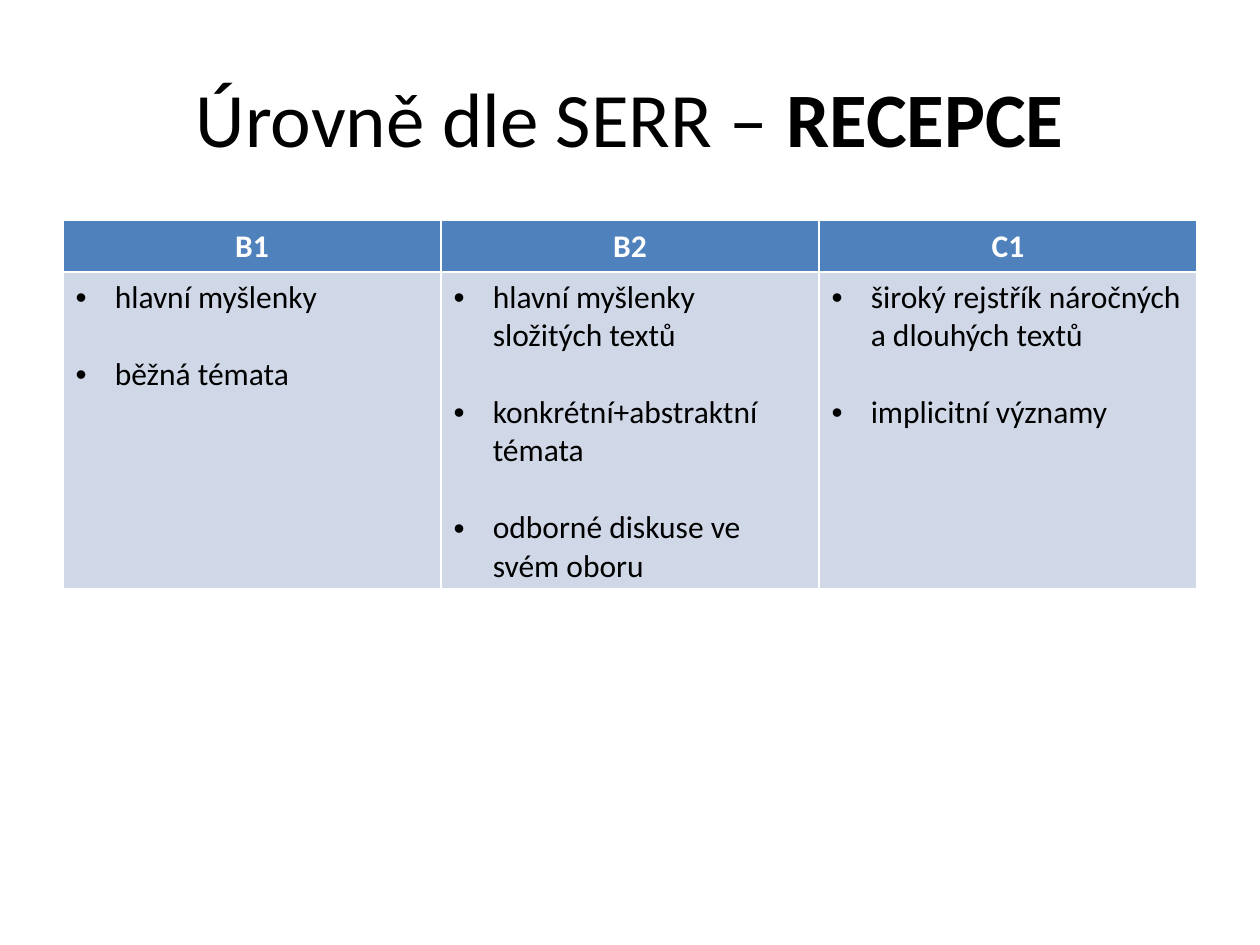
"""Build a slide comparing reception skills at CEFR levels B1, B2 and C1."""
import pptx
import pptx.dml.color
import pptx.enum.text
import pptx.oxml
import pptx.oxml.ns
import pptx.util

Cm = pptx.util.Cm
Pt = pptx.util.Pt
RGBColor = pptx.dml.color.RGBColor
Align = pptx.enum.text.PP_ALIGN

BLACK = RGBColor(0x00, 0x00, 0x00)
WHITE = RGBColor(0xFF, 0xFF, 0xFF)
HEADER_BLUE = RGBColor(0x4F, 0x81, 0xBD)
BODY_BLUE = RGBColor(0xD0, 0xD8, 0xE8)

LEVELS = {
    "B1": ["hlavní myšlenky", "běžná témata"],
    "B2": [
        "hlavní myšlenky složitých textů",
        "konkrétní+abstraktní témata",
        "odborné diskuse ve svém oboru",
    ],
    "C1": ["široký rejstřík náročných a dlouhých textů", "implicitní významy"],
}


class SlideBuilder:
    font_name = "Calibri"
    title_size = Pt(44)
    text_size = Pt(18)
    item_gap = Pt(22)
    bullet_indent = Cm(0.79)

    def __init__(self, page):
        self.page = page

    def style(self, paragraph, size, color, bold=None):
        font = paragraph.font
        font.name, font.size, font.bold = self.font_name, size, bold
        font.color.rgb = color

    def title(self, left, top, width, height, plain, strong):
        frame = self.page.shapes.add_textbox(left, top, width, height).text_frame
        frame.word_wrap = True
        frame.vertical_anchor = pptx.enum.text.MSO_ANCHOR.MIDDLE
        paragraph = frame.paragraphs[0]
        paragraph.alignment = Align.CENTER
        self.style(paragraph, self.title_size, BLACK)
        paragraph.add_run().text = plain
        span = paragraph.add_run()
        span.text = strong
        span.font.bold = True

    def bullet(self, paragraph):
        properties = paragraph._p.get_or_add_pPr()
        properties.set("marL", str(self.bullet_indent))
        properties.set("indent", str(-self.bullet_indent))
        namespace = pptx.oxml.ns.nsdecls("a")
        for xml in (
            f'<a:buFont {namespace} typeface="Arial"/>',
            f'<a:buChar {namespace} char="•"/>',
        ):
            properties.insert_element_before(
                pptx.oxml.parse_xml(xml), "a:tabLst", "a:defRPr", "a:extLst"
            )

    def fill(self, cell, color):
        cell.fill.solid()
        cell.fill.fore_color.rgb = color

    def header_cell(self, cell, label):
        self.fill(cell, HEADER_BLUE)
        paragraph = cell.text_frame.paragraphs[0]
        paragraph.text = label
        paragraph.alignment = Align.CENTER
        self.style(paragraph, self.text_size, WHITE, True)

    def list_cell(self, cell, items):
        self.fill(cell, BODY_BLUE)
        frame = cell.text_frame
        for index, item in enumerate(items):
            paragraph = frame.add_paragraph() if index else frame.paragraphs[0]
            paragraph.text = item
            self.style(paragraph, self.text_size, BLACK)
            if index:
                paragraph.space_before = self.item_gap
            self.bullet(paragraph)

    def level_table(self, left, top, width, row_heights, levels):
        table = self.page.shapes.add_table(
            len(row_heights), len(levels), left, top, width, sum(row_heights)
        ).table
        for row, height in zip(table.rows, row_heights):
            row.height = height
        for column, (label, items) in enumerate(levels.items()):
            self.header_cell(table.cell(0, column), label)
            self.list_cell(table.cell(1, column), items)


def main():
    deck = pptx.Presentation()
    deck.slide_width, deck.slide_height = Cm(25.4), Cm(19.05)
    builder = SlideBuilder(deck.slides.add_slide(deck.slide_layouts[6]))
    left, width = Cm(1.27), Cm(22.86)
    builder.title(left, Cm(0.76), width, Cm(3.18), "Úrovně dle SERR – ", "RECEPCE")
    builder.level_table(left, Cm(4.45), width, [Cm(1.03), Cm(6.36)], LEVELS)
    deck.save("out.pptx")


if __name__ == "__main__":
    main()
